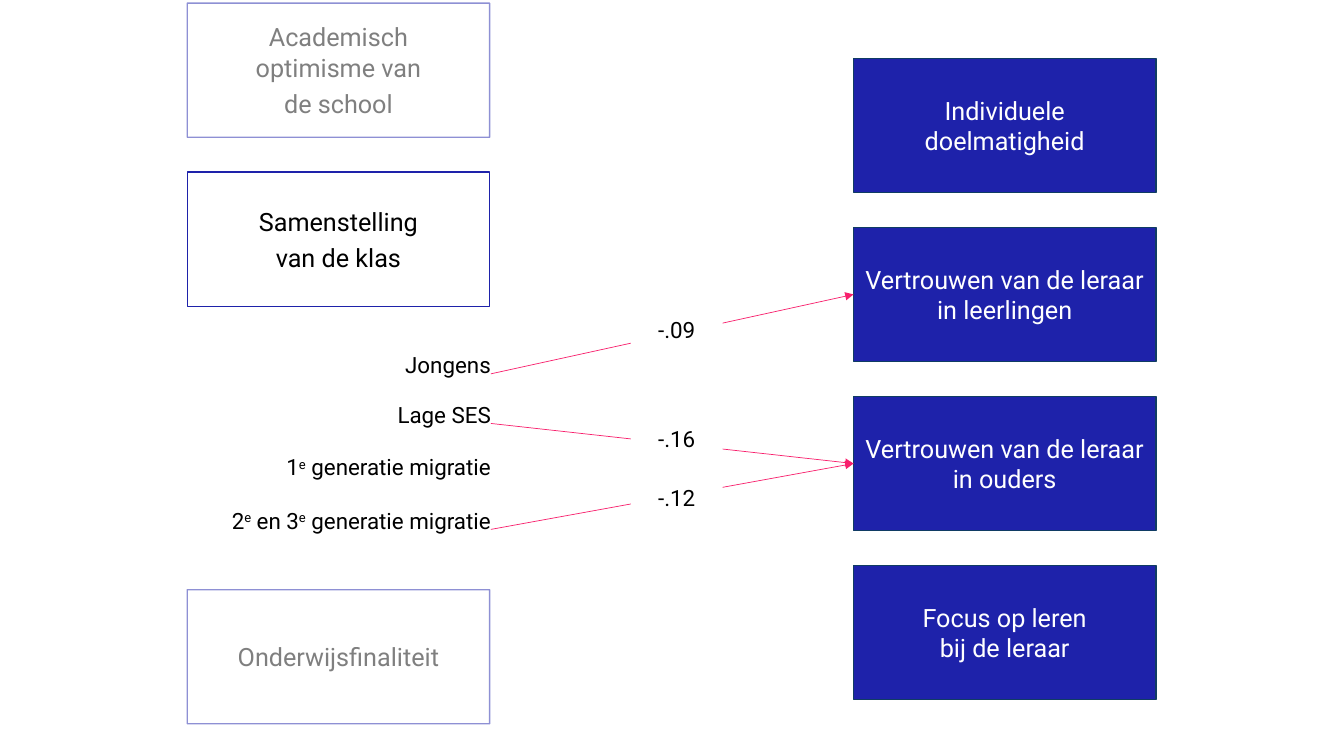
"""Build a path diagram from class composition to teacher attitudes."""
from lxml.etree import SubElement
from pptx import Presentation
from pptx.dml.color import RGBColor
from pptx.enum.shapes import MSO_CONNECTOR as CONN, MSO_SHAPE as SHAPE
from pptx.enum.text import MSO_ANCHOR as ANCHOR, PP_ALIGN as ALIGN
from pptx.oxml.ns import qn
from pptx.util import Cm, Pt

COLORS = {"white": "FFFFFF", "black": "000000", "blue": "1E22AA",
          "navy": "103C64", "pink": "F8206D"}
TOP, LEFT, BOTTOM, RIGHT = range(4)


class Diagram:
    font = "Roboto"
    box_size = (7.62, 3.38)

    def __init__(self, slide):
        self.slide = slide

    def paint(self, fill, color, faded=False):
        fill.solid()
        fill.fore_color.rgb = RGBColor.from_string(COLORS[color])
        if faded:
            for clr in fill._xPr.iter(qn("a:srgbClr")):
                SubElement(clr, qn("a:alpha")).set("val", "50000")

    def style(self, tf, size, color, align, after=0, faded=False):
        for p in tf.paragraphs:
            p.alignment = align
            p.space_after = Pt(after)
            for r in p.runs:
                r.font.name = self.font
                r.font.size = Pt(size)
                self.paint(r.font.fill, color, faded)

    def inset(self, tf, margin):
        tf.margin_left = tf.margin_right = Cm(margin)
        tf.margin_top = tf.margin_bottom = Cm(margin)

    def rect(self, x, y, w, h, text, fill, line=None, faded=False):
        sp = self.slide.shapes.add_shape(SHAPE.RECTANGLE, Cm(x), Cm(y), Cm(w), Cm(h))
        sp.shadow.inherit = False
        self.paint(sp.fill, fill)
        if line:
            sp.line.width = Pt(1)
            self.paint(sp.line.fill, line, faded)
        else:
            sp.line.fill.background()
        tf = sp.text_frame
        tf.text = text
        tf.word_wrap = True
        tf.vertical_anchor = ANCHOR.MIDDLE
        return sp

    def factor(self, y, text, faded):
        sp = self.rect(4.72, y, *self.box_size, text, "white", "blue", faded)
        self.inset(sp.text_frame, 0.51)
        self.style(sp.text_frame, 18, "black", ALIGN.CENTER, 4.5, faded)

    def outcome(self, y, text):
        sp = self.rect(21.51, y, *self.box_size, text, "blue", "navy")
        self.style(sp.text_frame, 18, "white", ALIGN.CENTER)
        return sp

    def label(self, y, text):
        sp = self.slide.shapes.add_textbox(Cm(5.05), Cm(y), Cm(7.32), Cm(1.12))
        tf = sp.text_frame
        tf.word_wrap = True
        self.inset(tf, 0)
        for i, part in enumerate(text.split("^")):
            r = tf.paragraphs[0].add_run()
            r.text = part
            if i % 2:
                r._r.get_or_add_rPr().set("baseline", "30000")
        self.style(tf, 16, "black", ALIGN.RIGHT)
        return sp

    def arrow(self, start, end):
        c = self.slide.shapes.add_connector(CONN.STRAIGHT, 0, 0, 0, 0)
        c.begin_connect(start, RIGHT)
        c.end_connect(end, LEFT)
        c.line.width = Pt(0.5)
        self.paint(c.line.fill, "pink")
        SubElement(c.line._get_or_add_ln(), qn("a:tailEnd")).set("type", "triangle")
        SubElement(c._element.spPr, qn("a:effectLst"))

    def coefficient(self, y, text):
        sp = self.rect(15.9, y, 2.31, 1.3, text, "white")
        self.inset(sp.text_frame, 0.51)
        self.style(sp.text_frame, 16, "black", ALIGN.CENTER, 4.5)


def main():
    prs = Presentation()
    prs.slide_width, prs.slide_height = Cm(33.87), Cm(19.05)
    d = Diagram(prs.slides.add_slide(prs.slide_layouts[6]))

    for y, text, faded in [
        (0.08, "Academisch optimisme van\nde school", True),
        (4.34, "Samenstelling\nvan de klas", False),
        (14.86, "Onderwijsfinaliteit", True),
    ]:
        d.factor(y, text, faded)

    boys, low_ses, first_gen, later_gen = [d.label(y, text) for y, text in [
        (8.86, "Jongens"),
        (10.11, "Lage SES"),
        (11.43, "1^e^ generatie migratie"),
        (12.78, "2^e^ en 3^e^ generatie migratie"),
    ]]

    efficacy, pupils, parents, focus = [
        d.outcome(1.47 + 4.26 * i, text) for i, text in enumerate([
            "Individuele doelmatigheid",
            "Vertrouwen van de leraar in leerlingen",
            "Vertrouwen van de leraar in ouders",
            "Focus op leren\nbij de leraar",
        ])]

    effects = [(boys, pupils, 7.65, "-.09"),
               (low_ses, parents, 10.39, "-.16"),
               (later_gen, parents, 11.89, "-.12")]
    for start, end, y, value in effects:
        d.arrow(start, end)
    for start, end, y, value in effects:
        d.coefficient(y, value)

    prs.save("out.pptx")


if __name__ == "__main__":
    main()
